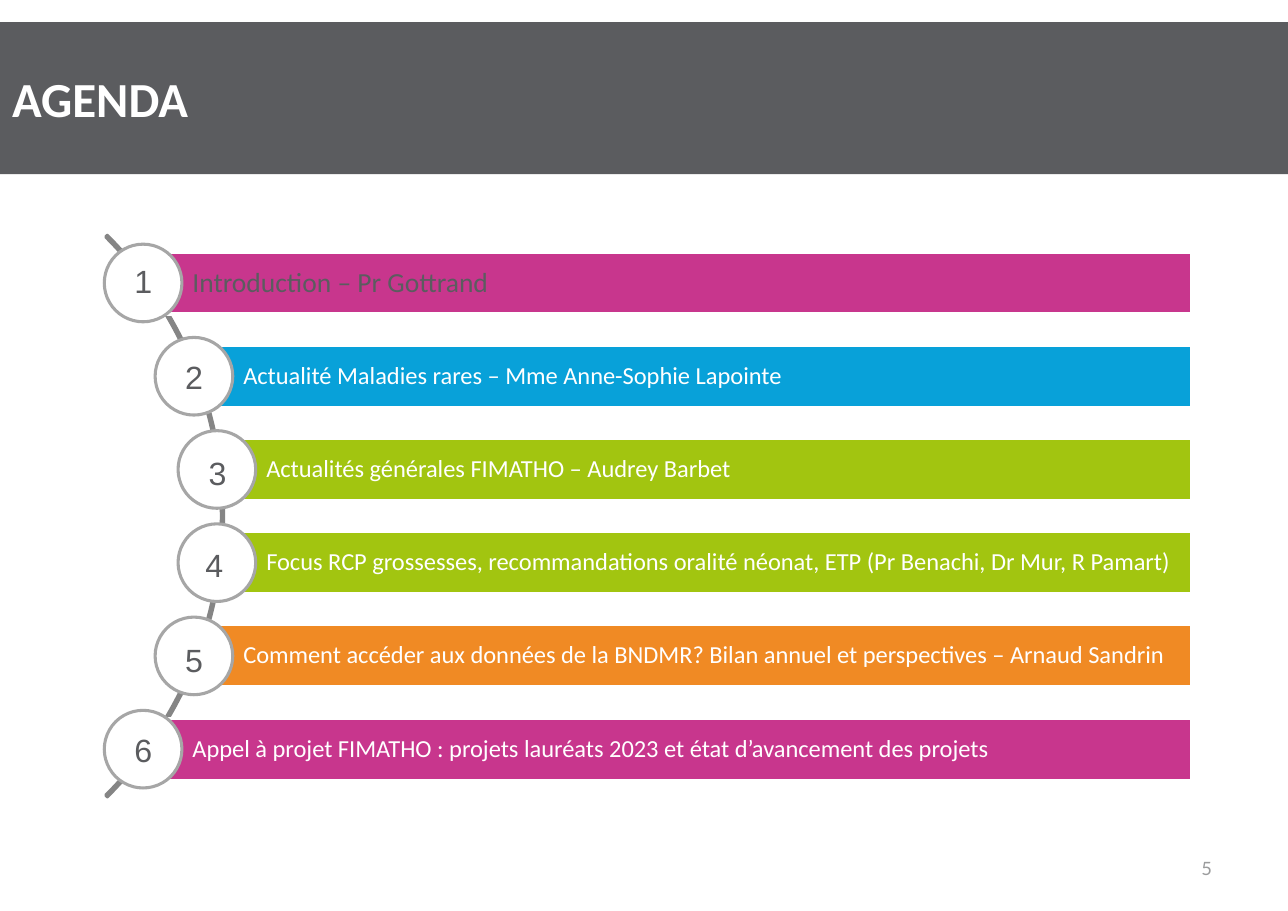
from dataclasses import dataclass
from math import sqrt

from pptx import Presentation
from pptx import util as u
from pptx.dml.color import RGBColor
from pptx.enum import shapes, text

COLOURS = {
    "slate": "5B5C5F",
    "white": "FFFFFF",
    "magenta": "C8368D",
    "blue": "08A1D9",
    "green": "A2C510",
    "orange": "F08A24",
    "arc": "858585",
    "ring": "A6A6A6",
    "page": "9B9C9D",
}

WIDTH, HEIGHT = u.Inches(11.69), u.Inches(8.27)
COLUMNS = 100
CELL = WIDTH / COLUMNS

ARC_X, ARC_Y = -13.47, 40.08
ARC_SIZE = 61.68
ORBIT = 30.53
PITCH = 7.24
BAR_HEIGHT = 4.82
BAR_RIGHT = 92.51
NODE_SIZE = 6.03
NUMBER_WIDTH, NUMBER_HEIGHT = 3.34, 3.85


@dataclass(frozen=True)
class Box:
    left: float
    top: float
    width: float
    height: float

    def lengths(self) -> tuple[u.Emu, ...]:
        return tuple(cells(n) for n in (self.left, self.top, self.width, self.height))


@dataclass(frozen=True)
class Style:
    font: str
    size: float
    colour: str
    bold: bool = False


@dataclass(frozen=True)
class Topic:
    label: str
    fill: str
    number_dx: float
    number_dy: float
    style: Style = Style("Calibri", 16, "white")


TITLE = Style("Calibri", 32, "white", True)
NUMBER = Style("Arial", 21, "slate")
PAGE = Style("Lato", 12, "page")

TOPICS = [
    Topic("Introduction – Pr Gottrand", "magenta", -1.54, -2.14,
          Style("Calibri", 18, "slate")),
    Topic("Actualité Maladies rares – Mme Anne-Sophie Lapointe",
          "blue", -1.54, -1.93),
    Topic("Actualités générales FIMATHO – Audrey Barbet",
          "green", -1.5, -1.72),
    Topic("Focus RCP grossesses, recommandations oralité néonat, ETP "
          "(Pr Benachi, Dr Mur, R Pamart)", "green", -1.75, -1.78),
    Topic("Comment accéder aux données de la BNDMR? Bilan annuel et "
          "perspectives – Arnaud Sandrin", "orange", -1.54, -1.66),
    Topic("Appel à projet FIMATHO : projets lauréats 2023 et état "
          "d’avancement des projets", "magenta", -1.54, -1.88),
]


def cells(n: float) -> u.Emu:
    return u.Emu(round(n * CELL))


def rgb(name: str) -> RGBColor:
    return RGBColor.from_string(COLOURS[name])


def write(sp, words: str, style: Style, align=text.PP_ALIGN.LEFT,
          anchor=text.MSO_ANCHOR.MIDDLE, insets=(0.94, 0.47, 0.94, 0.47)):
    tf = sp.text_frame
    tf.word_wrap = True
    tf.vertical_anchor = anchor
    tf.margin_left, tf.margin_top, tf.margin_right, tf.margin_bottom = map(cells, insets)
    p = tf.paragraphs[0]
    p.alignment = align
    r = p.add_run()
    r.text = words
    r.font.name = style.font
    r.font.size = u.Pt(style.size)
    r.font.bold = style.bold
    r.font.color.rgb = rgb(style.colour)
    return p


def add_shape(s, kind, box: Box, fill: str | None, line: str):
    sp = s.shapes.add_shape(kind, *box.lengths())
    sp.shadow.inherit = False
    if fill is None:
        sp.fill.background()
    else:
        sp.fill.solid()
        sp.fill.fore_color.rgb = rgb(fill)
    sp.line.color.rgb = rgb(line)
    sp.line.width = u.Pt(2)
    return sp


def add_title(s) -> None:
    sp = s.shapes.title
    sp.left, sp.top, sp.width, sp.height = Box(0, 1.71, COLUMNS, 11.81).lengths()
    sp.fill.solid()
    sp.fill.fore_color.rgb = rgb("slate")
    write(sp, "AGENDA", TITLE, text.PP_ALIGN.JUSTIFY)


def add_arc(s) -> None:
    half = ARC_SIZE / 2
    box = Box(ARC_X - half, ARC_Y - half, ARC_SIZE, ARC_SIZE)
    sp = add_shape(s, shapes.MSO_SHAPE.BLOCK_ARC, box, None, "arc")
    for i, value in enumerate((189, 27, 0.003)):
        sp.adjustments[i] = value


def add_topic(s, index: int, topic: Topic) -> None:
    dy = (index - (len(TOPICS) - 1) / 2) * PITCH
    x, y = ARC_X + sqrt(ORBIT ** 2 - dy ** 2), ARC_Y + dy

    bar = add_shape(s, shapes.MSO_SHAPE.RECTANGLE,
                    Box(x, y - BAR_HEIGHT / 2, BAR_RIGHT - x, BAR_HEIGHT),
                    topic.fill, "white")
    p = write(bar, topic.label, topic.style, insets=(3.83, 0.35, 0.35, 0.35))
    p.line_spacing = 0.9

    half = NODE_SIZE / 2
    add_shape(s, shapes.MSO_SHAPE.OVAL,
              Box(x - half, y - half, NODE_SIZE, NODE_SIZE), "white", "ring")

    box = Box(x + topic.number_dx, y + topic.number_dy, NUMBER_WIDTH, NUMBER_HEIGHT)
    number = s.shapes.add_textbox(*box.lengths())
    write(number, str(index + 1), NUMBER, anchor=text.MSO_ANCHOR.TOP,
          insets=(0.86, 0.43, 0.86, 0.43))


def add_page_number(s) -> None:
    sp = s.shapes.add_textbox(*Box(83.06, 65.53, 11.98, 3.76).lengths())
    write(sp, "5", PAGE, text.PP_ALIGN.RIGHT)


def main() -> None:
    prs = Presentation()
    prs.slide_width, prs.slide_height = WIDTH, HEIGHT
    s = prs.slides.add_slide(prs.slide_layouts[5])
    add_title(s)
    add_arc(s)
    for index, topic in enumerate(TOPICS):
        add_topic(s, index, topic)
    add_page_number(s)
    prs.save("out.pptx")


if __name__ == "__main__":
    main()
